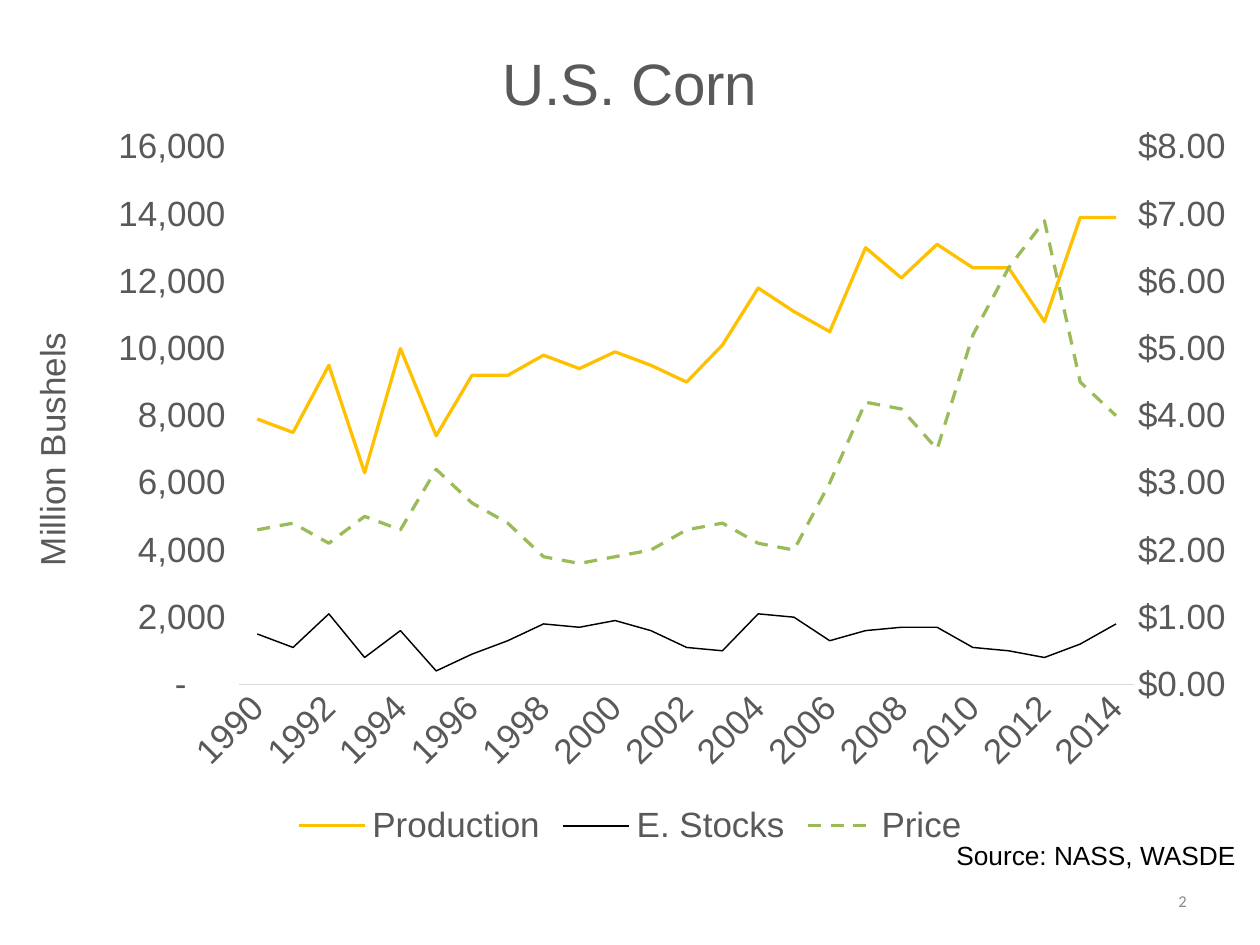
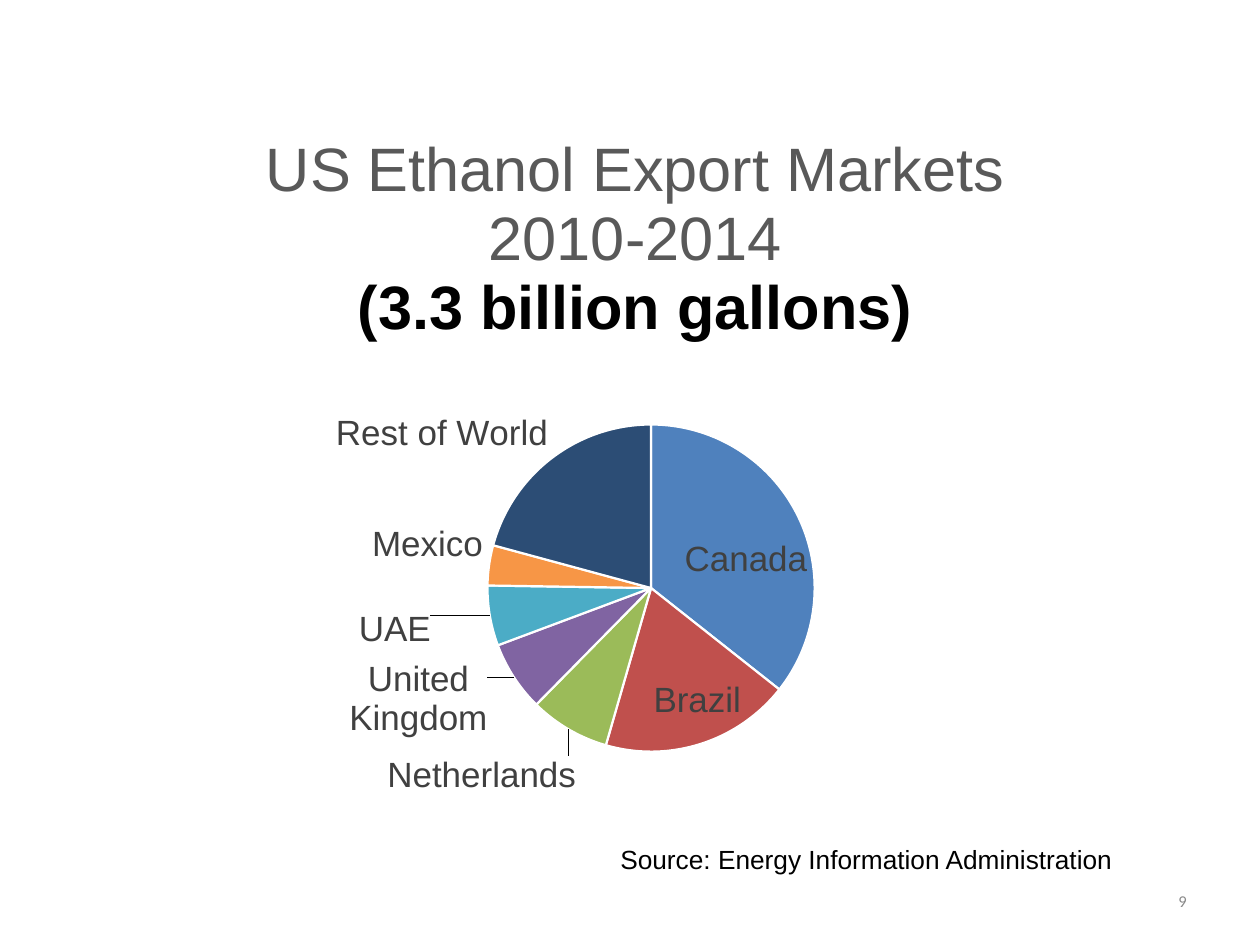
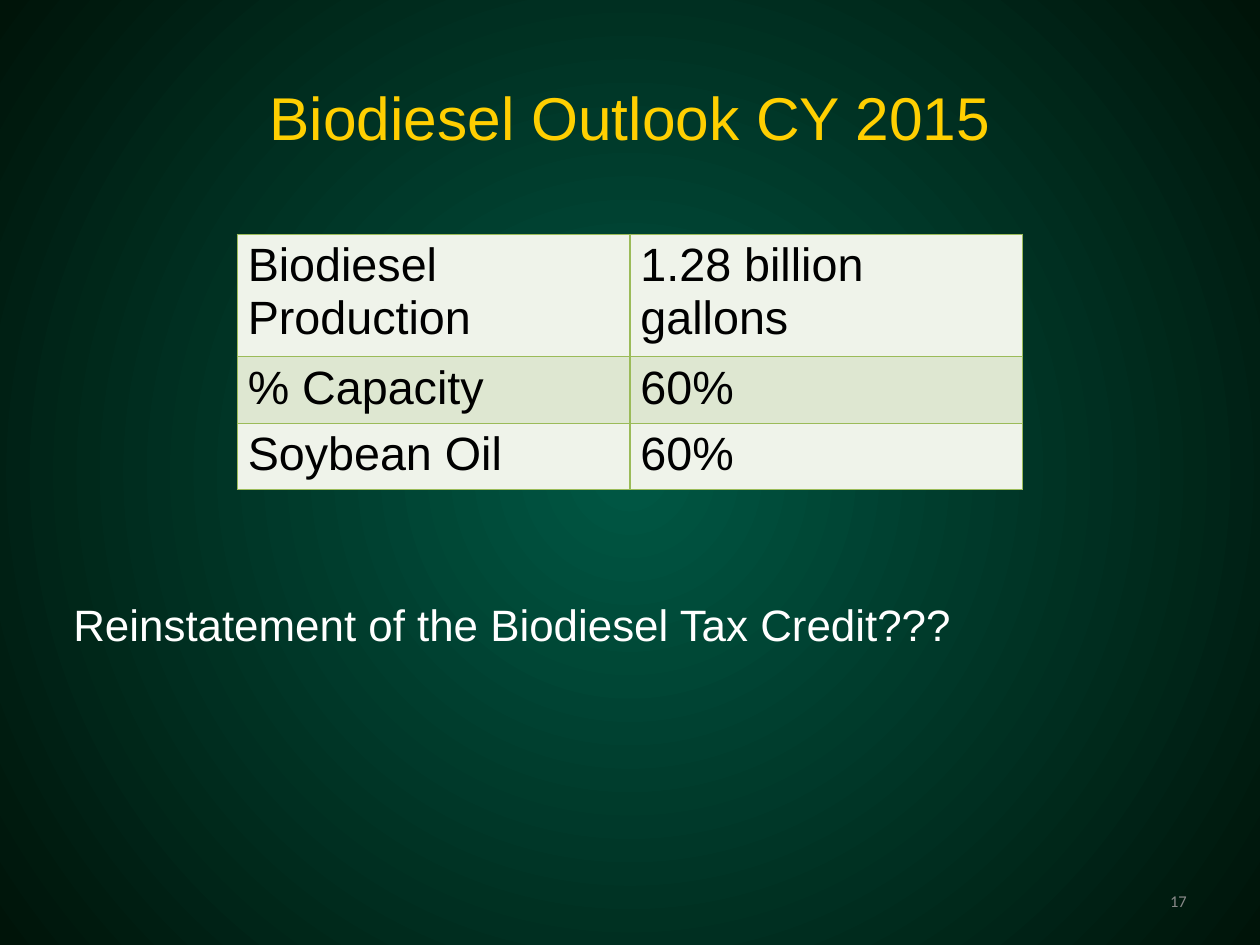
"""Build three slides on corn, ethanol exports and biodiesel."""
from copy import deepcopy
from dataclasses import dataclass
from typing import Any

from lxml import etree
from pptx import Presentation
from pptx.chart.axis import ValueAxis
from pptx.chart.data import CategoryChartData
from pptx.dml.color import RGBColor
from pptx.enum import chart as ce, dml, text as te
from pptx.oxml import ns
from pptx.util import Inches, Pt

BLACK = RGBColor(0, 0, 0)
WHITE = RGBColor(255, 255, 255)
GRAY = RGBColor(0x59, 0x59, 0x59)
DARK = RGBColor(0x40, 0x40, 0x40)
PALE = RGBColor(0xD9, 0xD9, 0xD9)
MUTED = RGBColor(0x89, 0x89, 0x89)
GOLD = RGBColor(0xFF, 0xCF, 0x01)
AMBER = RGBColor(0xFF, 0xC0, 0)
LIME = RGBColor(0x9B, 0xBB, 0x59)
TEAL = RGBColor(0, 0x56, 0x43)
NIGHT = RGBColor(0, 0x14, 0x09)
BANDS = (RGBColor(0xEF, 0xF3, 0xEA), RGBColor(0xDE, 0xE7, 0xD1))
MONEY = '"$"#,##0.00'
COUNT = r'_(* #,##0_);_(* \(#,##0\);_(* "-"??_);_(@_)'
LABEL = {"name": "Arial", "size": Pt(24), "color": GRAY}


@dataclass(frozen=True)
class Box:
    left: float
    top: float
    width: float
    height: float

    def dims(self) -> list[int]:
        return [Inches(v) for v in (self.left, self.top, self.width, self.height)]


@dataclass(frozen=True)
class Line:
    name: str
    color: RGBColor
    width: float
    vals: tuple[float, ...]
    dash: Any = None


@dataclass(frozen=True)
class Slice:
    name: str
    share: int
    color: RGBColor
    inside: bool = False
    shift: tuple[float, float] | None = None


LINES = (
    Line("Production", AMBER, 2.25, (
        7900, 7500, 9500, 6300, 10000, 7400, 9200, 9200, 9800, 9400, 9900, 9500, 9000,
        10100, 11800, 11100, 10500, 13000, 12100, 13100, 12400, 12400, 10800, 13900, 13900)),
    Line("E. Stocks", BLACK, 1, (
        1500, 1100, 2100, 800, 1600, 400, 900, 1300, 1800, 1700, 1900, 1600, 1100,
        1000, 2100, 2000, 1300, 1600, 1700, 1700, 1100, 1000, 800, 1200, 1800)),
    Line("Price", LIME, 2.25, (
        2.3, 2.4, 2.1, 2.5, 2.3, 3.2, 2.7, 2.4, 1.9, 1.8, 1.9, 2, 2.3,
        2.4, 2.1, 2, 3, 4.2, 4.1, 3.5, 5.2, 6.2, 6.9, 4.5, 4), dml.MSO_LINE.DASH),
)
SLICES = (
    Slice("Canada", 36, RGBColor(0x4F, 0x81, 0xBD), True, (0.02, 0.01)),
    Slice("Brazil", 19, RGBColor(0xC0, 0x50, 0x4D), True, (0.02, 0.05)),
    Slice("Netherlands", 8, LIME, False, (0.01, 0.03)),
    Slice("United Kingdom", 7, RGBColor(0x80, 0x64, 0xA2), False, (-0.02, -0.03)),
    Slice("UAE", 6, RGBColor(0x4B, 0xAC, 0xC6), False, (-0.05, -0.01)),
    Slice("Mexico", 4, RGBColor(0xF7, 0x96, 0x46)),
    Slice("Rest of World", 21, RGBColor(0x2C, 0x4D, 0x75)),
)
ROWS = (("Biodiesel Production", "1.28 billion gallons"),
        ("% Capacity", "60%"), ("Soybean Oil", "60%"))


def style(font: Any, form: dict[str, Any]) -> None:
    for key, val in form.items():
        if key == "color":
            font.color.rgb = val
        else:
            setattr(font, key, val)


def node(tag: str, **attrs: str) -> Any:
    item = etree.Element(ns.qn(tag))
    for key, val in attrs.items():
        item.set(key, val)
    return item


def layout(**spots: Any) -> Any:
    outer = node("c:layout")
    inner = etree.SubElement(outer, ns.qn("c:manualLayout"))
    for key, val in spots.items():
        inner.append(node(f"c:{key}", val=str(val)))
    return outer


def place(chart: Any, x: float, y: float, w: float, h: float) -> None:
    area = chart._chartSpace.chart.plotArea
    for old in area.findall(ns.qn("c:layout")):
        area.remove(old)
    area.insert(0, layout(layoutTarget="inner", xMode="edge", yMode="edge", x=x, y=y, w=w, h=h))


def write(slide: Any, box: Box, words: str, form: dict[str, Any],
          align: Any = te.PP_ALIGN.LEFT, anchor: Any = te.MSO_ANCHOR.TOP) -> None:
    frame = slide.shapes.add_textbox(*box.dims()).text_frame
    frame.word_wrap = True
    frame.vertical_anchor = anchor
    para = frame.paragraphs[0]
    para.alignment = align
    run = para.add_run()
    run.text = words
    style(run.font, form)


def start(deck: Any, page: int) -> Any:
    slide = deck.slides.add_slide(deck.slide_layouts[6])
    write(slide, Box(8.6, 8.34, 2.8, 0.48), str(page),
          {"name": "Calibri", "size": Pt(11.3), "color": MUTED},
          te.PP_ALIGN.RIGHT, te.MSO_ANCHOR.MIDDLE)
    return slide


def source(slide: Any, box: Box, words: str) -> None:
    write(slide, box, f"Source: {words}", {"name": "Arial", "size": Pt(18), "color": BLACK})


def head(title: Any, parts: list[tuple[str, dict[str, Any]]]) -> None:
    frame = title.text_frame
    for i, (words, form) in enumerate(parts):
        para = frame.add_paragraph() if i else frame.paragraphs[0]
        run = para.add_run()
        run.text = words
        style(run.font, LABEL | {"bold": False} | form)


def split(chart: Any) -> None:
    area = chart._chartSpace.chart.plotArea
    left = area.find(ns.qn("c:lineChart"))
    right = deepcopy(left)
    for plot, keep in ((left, slice(0, 2)), (right, slice(2, 3))):
        rows = plot.findall(ns.qn("c:ser"))
        for row in rows:
            if row not in rows[keep]:
                plot.remove(row)
    left.addnext(right)
    cat, val = (deepcopy(area.find(ns.qn(t))) for t in ("c:catAx", "c:valAx"))
    ids = ("50010", "50020")
    for ref, new in zip(right.findall(ns.qn("c:axId")), ids):
        ref.set("val", new)
    for axis, own, other in ((cat, *ids), (val, *ids[::-1])):
        axis.find(ns.qn("c:axId")).set("val", own)
        axis.find(ns.qn("c:crossAx")).set("val", other)
    area.findall(ns.qn("c:valAx"))[-1].addnext(val)
    val.addnext(cat)
    cat.find(ns.qn("c:delete")).set("val", "1")
    val.find(ns.qn("c:axPos")).set("val", "r")
    val.find(ns.qn("c:crosses")).set("val", "max")
    axis = ValueAxis(val)
    axis.has_title = False
    axis.maximum_scale, axis.major_unit = 8, 1
    axis.tick_labels.number_format = MONEY


def corn(deck: Any) -> None:
    slide = start(deck, 2)
    data = CategoryChartData()
    data.categories = [str(year) for year in range(1990, 2015)]
    for line in LINES:
        data.add_series(line.name, line.vals)
    chart = slide.shapes.add_chart(
        ce.XL_CHART_TYPE.LINE, *Box(0, 0.12, 12, 8).dims(), data).chart
    style(chart.font, LABEL)
    head(chart.chart_title, [("U.S. Corn", {"size": Pt(40)})])
    chart.has_legend = True
    chart.legend.position = ce.XL_LEGEND_POSITION.BOTTOM
    chart.legend.include_in_layout = False
    style(chart.legend.font, LABEL)
    for row, line in zip(chart.plots[0].series, LINES):
        row.smooth = False
        row.marker.style = ce.XL_MARKER_STYLE.NONE
        row.format.line.color.rgb = line.color
        row.format.line.width = Pt(line.width)
        if line.dash:
            row.format.line.dash_style = line.dash
    years, tons = chart.category_axis, chart.value_axis
    for axis in (years, tons):
        axis.has_major_gridlines = False
        axis.major_tick_mark = ce.XL_TICK_MARK.NONE
        style(axis.tick_labels.font, LABEL)
    years._element.txPr.bodyPr.set("rot", "-2700000")
    years.format.line.color.rgb = PALE
    years.format.line.width = Pt(0.75)
    tons.format.line.fill.background()
    tons.minimum_scale, tons.maximum_scale, tons.major_unit = 0, 16000, 2000
    tons.tick_labels.number_format = COUNT
    tons.tick_labels.number_format_is_linked = False
    head(tons.axis_title, [("Million Bushels", {})])
    tons.axis_title.text_frame._txBody.bodyPr.set("rot", "-5400000")
    split(chart)
    place(chart, 0.19, 0.16, 0.71, 0.64)
    source(slide, Box(9.01, 7.94, 3.65, 0.4), "NASS, WASDE")


def ethanol(deck: Any) -> None:
    slide = start(deck, 9)
    data = CategoryChartData()
    data.categories = [part.name for part in SLICES]
    data.add_series("Series 1", [part.share for part in SLICES])
    chart = slide.shapes.add_chart(
        ce.XL_CHART_TYPE.PIE, *Box(1, 1.06, 10.1, 6.63).dims(), data).chart
    style(chart.font, LABEL)
    chart.has_legend = False
    head(chart.chart_title, [
        ("US Ethanol Export Markets 2010-2014", {"size": Pt(42)}),
        ("(3.3 billion gallons)", {"size": Pt(42), "bold": True, "color": BLACK})])
    chart.plots[0].vary_by_categories = True
    row = chart.plots[0].series[0]
    labels = row.data_labels
    labels.show_category_name, labels.show_value = True, False
    style(labels.font, LABEL | {"color": DARK})
    spots = ce.XL_LABEL_POSITION
    for i, part in enumerate(SLICES):
        point = row.points[i]
        point.format.fill.solid()
        point.format.fill.fore_color.rgb = part.color
        point.format.line.color.rgb = WHITE
        point.format.line.width = Pt(1.5)
        label = point.data_label
        style(label.font, LABEL | {"color": DARK})
        label.position = spots.CENTER if part.inside else spots.OUTSIDE_END
        item = label._get_or_add_dLbl()
        for tag, flag in (("c:showVal", "0"), ("c:showCatName", "1")):
            item.find(ns.qn(tag)).set("val", flag)
        if part.shift:
            x, y = part.shift
            item.find(ns.qn("c:idx")).addnext(layout(x=x, y=y))
    group = labels._element
    for old in group.findall(ns.qn("c:showLeaderLines")):
        group.remove(old)
    group.append(node("c:showLeaderLines", val="1"))
    place(chart, 0.36, 0.45, 0.31, 0.47)
    source(slide, Box(5.81, 7.98, 5.57, 0.4), "Energy Information Administration")


def glow(slide: Any) -> None:
    fill = slide.background.fill
    fill.gradient()
    for stop, color, spot in zip(fill.gradient_stops, (TEAL, NIGHT), (0.02, 1)):
        stop.color.rgb = color
        stop.position = spot
    grad = slide._element.find(".//" + ns.qn("a:gradFill"))
    ring = node("a:path", path="circle")
    ring.append(node("a:fillToRect", l="50000", t="50000", r="50000", b="50000"))
    grad.replace(grad.find(ns.qn("a:lin")), ring)


def edge(cell: Any) -> None:
    props = cell._tc.get_or_add_tcPr()
    for i, side in enumerate("LRTB"):
        line = node(f"a:ln{side}", w=str(Pt(1)))
        fill = etree.SubElement(line, ns.qn("a:solidFill"))
        fill.append(node("a:srgbClr", val=str(LIME)))
        props.insert(i, line)


def diesel(deck: Any) -> None:
    slide = start(deck, 17)
    glow(slide)
    write(slide, Box(0.6, 0.36, 10.8, 1.5), "Biodiesel Outlook CY 2015",
          {"name": "Arial", "size": Pt(41.4), "color": GOLD},
          te.PP_ALIGN.CENTER, te.MSO_ANCHOR.MIDDLE)
    write(slide, Box(0.6, 5.64, 10.8, 0.6), "Reinstatement of the Biodiesel Tax Credit???",
          {"name": "Arial", "size": Pt(30.1), "color": WHITE})
    table = slide.shapes.add_table(3, 2, *Box(2.26, 2.23, 7.48, 2.29).dims()).table
    table.first_row = table.horz_banding = False
    for i, words in enumerate(ROWS):
        table.rows[i].height = Inches(0.6 if i else 1.09)
        for j, word in enumerate(words):
            cell = table.cell(i, j)
            cell.text = word
            style(cell.text_frame.paragraphs[0].runs[0].font,
                  {"name": "Arial", "size": Pt(32), "color": BLACK})
            cell.fill.solid()
            cell.fill.fore_color.rgb = BANDS[i % 2]
            edge(cell)


def main() -> None:
    deck = Presentation()
    deck.slide_width, deck.slide_height = Inches(12), Inches(9)
    for build in (corn, ethanol, diesel):
        build(deck)
    deck.save("out.pptx")


if __name__ == "__main__":
    main()
